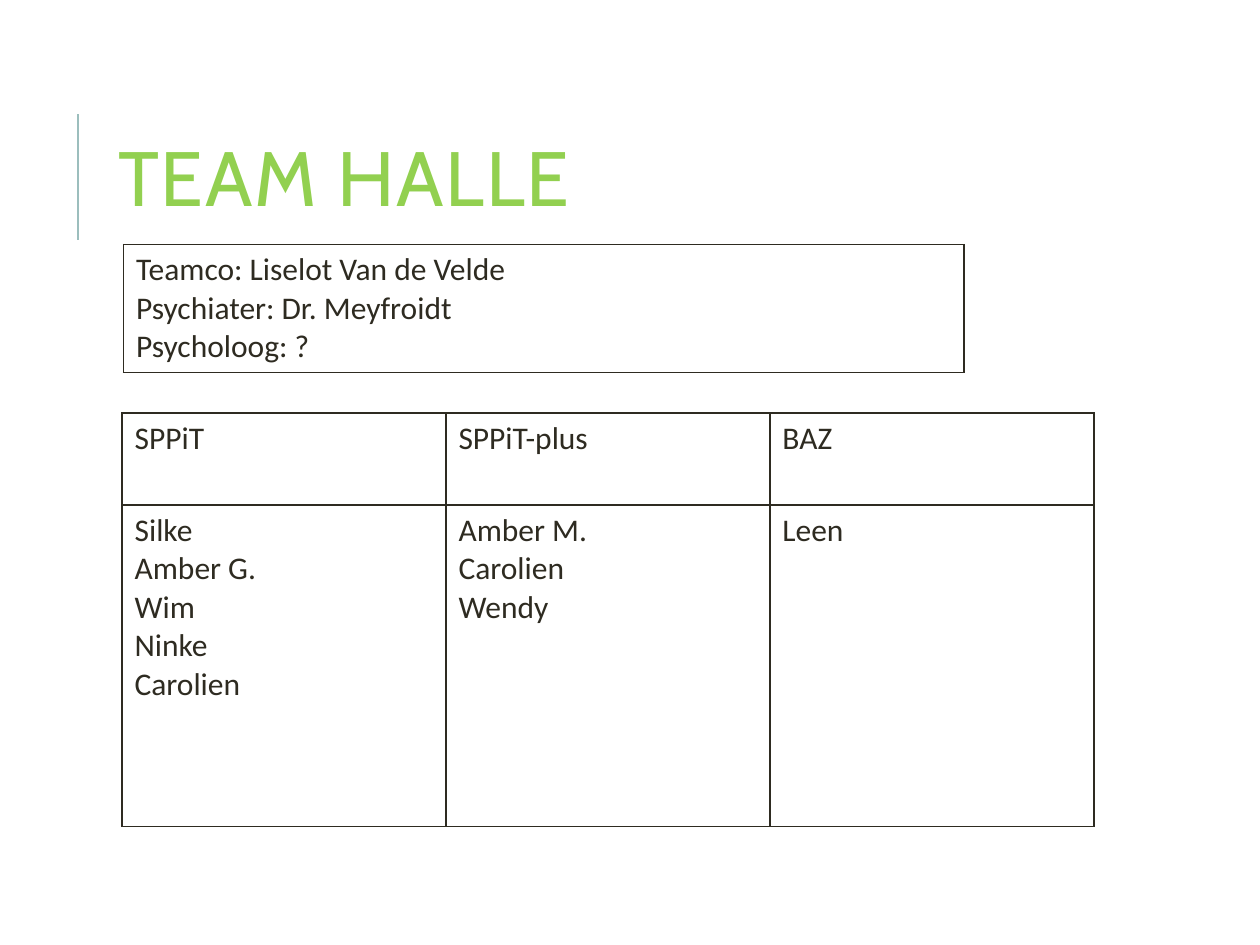
from lxml.etree import SubElement
from pptx import Presentation
from pptx.dml.color import RGBColor as Rgb
from pptx.enum.shapes import MSO_CONNECTOR as Connector
from pptx.enum.text import MSO_ANCHOR as Anchor
from pptx.oxml import parse_xml
from pptx.oxml.ns import nsdecls, qn
from pptx.util import Cm, Pt

COLORS = {"accent": "9CBEBD", "title": "92D050", "ink": "2E2B21"}
TITLE_FONT = {"name": "Cabin", "size": Pt(44)}
BODY_FONT = {"name": "Calibri", "size": Pt(18)}
TITLE_FRAME = {"word_wrap": True, "vertical_anchor": Anchor.MIDDLE}


def style_font(font, values, color):
    for key, value in values.items():
        setattr(font, key, value)
    font.color.rgb = Rgb.from_string(COLORS[color])


def add_grid(left, top, widths, heights, rows):
    grid = slide.shapes.add_table(
        len(heights), len(widths), Cm(left), Cm(top), Cm(sum(widths)), Cm(sum(heights))
    ).table
    grid.first_row = grid.horz_banding = False
    for column, width in zip(grid.columns, widths):
        column.width = Cm(width)
    for row, height, texts in zip(grid.rows, heights, rows):
        row.height = Cm(height)
        for cell, text in zip(row.cells, texts):
            cell.text = text
            for paragraph in cell.text_frame.paragraphs:
                style_font(paragraph.runs[0].font, BODY_FONT, "ink")
            cell.fill.background()
            properties = cell._tc.get_or_add_tcPr()
            for position, side in enumerate("LRTB"):
                properties.insert(position, parse_xml(
                    f'<a:ln{side} {nsdecls("a")} w="{Pt(1)}"><a:solidFill>'
                    f'<a:srgbClr val="{COLORS["ink"]}"/></a:solidFill></a:ln{side}>'
                ))


prs = Presentation()
prs.slide_width, prs.slide_height = Cm(25.4), Cm(19.05)
slide = prs.slides.add_slide(prs.slide_layouts[6])

accent = slide.shapes.add_connector(
    Connector.STRAIGHT, Cm(1.57), Cm(4.83), Cm(1.57), Cm(2.29)
)
accent.line.color.rgb = Rgb.from_string(COLORS["accent"])
accent.line.width = Pt(1.5)
SubElement(accent._element.spPr, qn("a:effectLst"))

heading = slide.shapes.add_textbox(Cm(2.13), Cm(1.63), Cm(20.24), Cm(4.17)).text_frame
for key, value in TITLE_FRAME.items():
    setattr(heading, key, value)
heading.text = "TEAM HALLE"
heading.paragraphs[0].line_spacing = 0.8
team_name = heading.paragraphs[0].runs[0]
style_font(team_name.font, TITLE_FONT, "title")
team_name.font._element.set("spc", "100")

leads = "Teamco: Liselot Van de Velde\nPsychiater: Dr. Meyfroidt\nPsycholoog: ?"
add_grid(2.49, 4.93, [16.94], [2.58], [[leads]])

members = {
    "SPPiT": ["Silke", "Amber G.", "Wim", "Ninke", "Carolien"],
    "SPPiT-plus": ["Amber M.", "Carolien", "Wendy"],
    "BAZ": ["Leen"],
}
add_grid(
    2.46, 8.33, [6.53] * len(members), [1.85, 6.48],
    [list(members), ["\n".join(names) for names in members.values()]],
)

prs.save("out.pptx")
